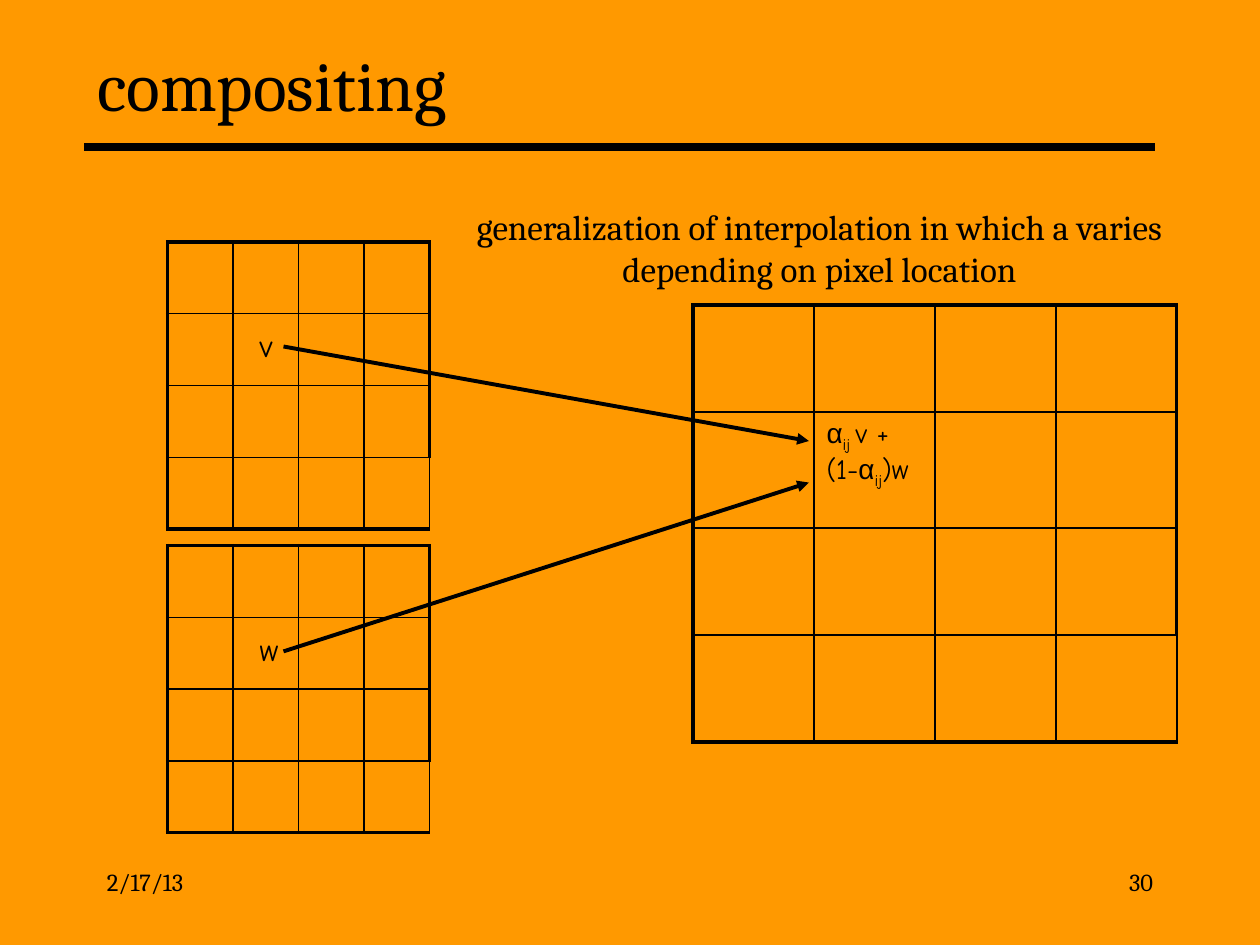
from lxml.etree import SubElement
from pptx import Presentation
from pptx.dml.color import RGBColor
from pptx.enum.shapes import MSO_CONNECTOR
from pptx.enum.text import MSO_ANCHOR, PP_ALIGN
from pptx.oxml.ns import qn
from pptx.util import Inches, Pt

BLACK, ORANGE = "000000", "FF9900"
SERIF, HAND, SANS = "Cambria", "Comic Neue", "Arial"
THIN, THICK = 1, 2.25

# Content: a span is (text, size, font, subscript)
TITLE = "compositing"
CAPTION = "generalization of interpolation in which a varies depending on pixel location"
BLEND = [("α", 16, SANS, False), ("ij ", 16, HAND, True), ("v + (1-", 16, HAND, False),
         ("α", 16, SANS, False), ("ij", 16, HAND, True), (")w", 16, HAND, False)]


def pixel(name):
    return [(" ", 24, HAND, False), (name, 18, HAND, False)]


# Pixel grids: left, top, column width, row heights, spans of the marked pixel
SOURCE_ROWS = [0.57] * 4
GRIDS = [
    (1.33, 1.92, 0.52, SOURCE_ROWS, pixel("v")),
    (1.33, 4.33, 0.52, SOURCE_ROWS, pixel("w")),
    (5.5, 2.42, 0.96, [0.85, 0.92, 0.85, 0.85], BLEND),
]
MARKED = (1, 1)
ARROWS = [((2.25, 2.75), (6.42, 3.5)), ((2.25, 5.17), (6.42, 3.83))]
# Text boxes: text, size, alignment, (left, top, width, height)
LABELS = [
    (CAPTION, 20, PP_ALIGN.CENTER, (3.42, 1.58, 6.17, 0.77)),
    ("2/17/13", 14, PP_ALIGN.LEFT, (0.75, 6.83, 2.08, 0.5)),
    ("30", 14, PP_ALIGN.RIGHT, (7.17, 6.83, 2.08, 0.5)),
]


def color(code):
    return RGBColor.from_string(code)


def add_span(para, text, size, font, subscript=False):
    span = para.add_run()
    span.text = text
    span.font.size = Pt(size)
    span.font.name = font
    span.font.color.rgb = color(BLACK)
    if subscript:
        span._r.get_or_add_rPr().set("baseline", "-25000")


def add_line(page, start, end, width, arrow=False):
    line = page.shapes.add_connector(
        MSO_CONNECTOR.STRAIGHT, *(Inches(value) for value in start + end))
    line.line.color.rgb = color(BLACK)
    line.line.width = Pt(width)
    properties = line._element.spPr
    if arrow:
        SubElement(properties.find(qn("a:ln")), qn("a:tailEnd"), type="triangle")
    SubElement(properties, qn("a:effectLst"))


def set_borders(cell, widths):
    properties = cell._tc.get_or_add_tcPr()
    for side, width in zip("LRTB", widths):
        border = SubElement(properties, qn(f"a:ln{side}"), w=str(Pt(width)))
        fill = SubElement(border, qn("a:solidFill"))
        SubElement(fill, qn("a:srgbClr"), val=BLACK)


def add_grid(page, left, top, column_width, heights, spans):
    count = len(heights)
    last = count - 1
    table = page.shapes.add_table(
        count, count, Inches(left), Inches(top),
        Inches(column_width * count), Inches(sum(heights))).table
    table.first_row = table.horz_banding = False
    for column in table.columns:
        column.width = Inches(column_width)
    for i, height in enumerate(heights):
        table.rows[i].height = Inches(height)
        for j in range(count):
            cell = table.cell(i, j)
            # The outline is thick, except beside the bottom right cell
            outer = (j == 0, j == last and i < last, i == 0, i == last)
            set_borders(cell, [THICK if edge else THIN for edge in outer])
            cell.fill.background()
    para = table.cell(*MARKED).text_frame.paragraphs[0]
    for span in spans:
        add_span(para, *span)


def main():
    deck = Presentation()
    deck.slide_width, deck.slide_height = Inches(10), Inches(7.5)
    page = deck.slides.add_slide(deck.slide_layouts[5])
    page.background.fill.solid()
    page.background.fill.fore_color.rgb = color(ORANGE)

    # Title and rule
    title = page.shapes.title
    title.left, title.top, title.width, title.height = map(Inches, (0.67, 0.25, 8.5, 0.83))
    title.text_frame.vertical_anchor = MSO_ANCHOR.MIDDLE
    para = title.text_frame.paragraphs[0]
    para.alignment = PP_ALIGN.LEFT
    add_span(para, TITLE, 40, SERIF)
    add_line(page, (0.67, 1.17), (9.17, 1.17), 4.5)

    # Pixel grids and the arrows from sources to the blend
    for grid in GRIDS:
        add_grid(page, *grid)
    for start, end in ARROWS:
        add_line(page, start, end, THICK, arrow=True)

    # Caption, date and page number
    for text, size, alignment, place in LABELS:
        box = page.shapes.add_textbox(*map(Inches, place))
        box.text_frame.word_wrap = True
        para = box.text_frame.paragraphs[0]
        para.alignment = alignment
        add_span(para, text, size, SERIF)

    deck.save("out.pptx")


if __name__ == "__main__":
    main()
